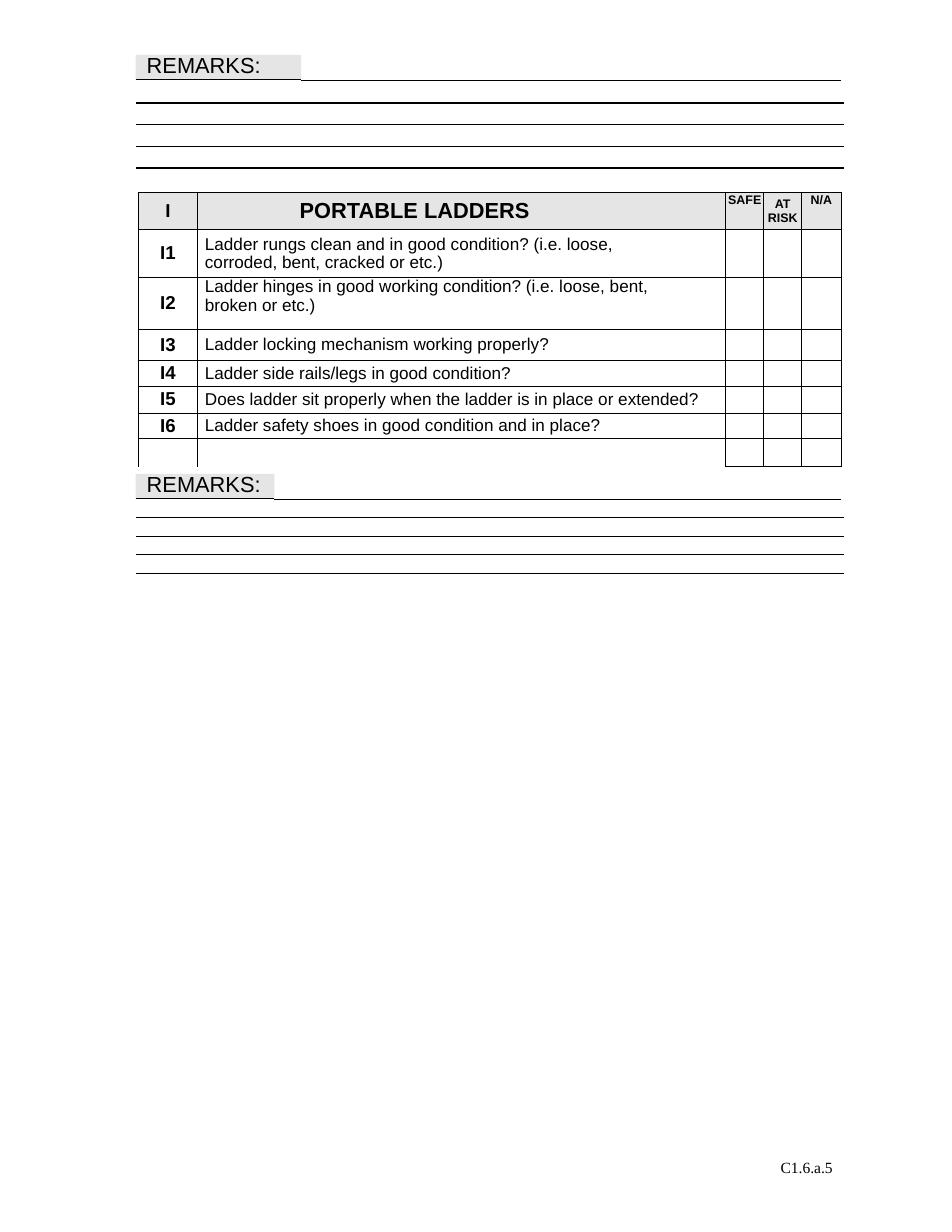
from lxml.etree import SubElement
from pptx import Presentation
from pptx.dml.color import RGBColor
from pptx.enum.shapes import MSO_CONNECTOR
from pptx.enum.text import MSO_ANCHOR, MSO_AUTO_SIZE, PP_ALIGN
from pptx.oxml.ns import qn
from pptx.util import Inches, Pt

BLACK = RGBColor(0, 0, 0)
GREY = RGBColor(0xE5, 0xE5, 0xE5)
RULE_WIDTH = Pt(0.7)
SANS, SERIF = "Arial", "Times New Roman"

COLUMN_WIDTHS = [0.52, 4.72, 0.34, 0.34, 0.35]
ROW_HEIGHTS = [0.33, 0.43, 0.46, 0.28, 0.23, 0.24, 0.23, 0.25]
HEADINGS = ["I", "PORTABLE LADDERS", "SAFE", "AT\vRISK", "N/A"]
QUESTIONS = [
    "Ladder rungs clean and in good condition? (i.e. loose, corroded, bent, cracked or etc.)",
    "Ladder hinges in good working condition? (i.e. loose, bent, broken or etc.)",
    "Ladder locking mechanism working properly?",
    "Ladder side rails/legs in good condition?",
    "Does ladder sit properly when the ladder is in place or extended?",
    "Ladder safety shoes in good condition and in place?",
]


def style_paragraph(para, size, line, name=SANS, bold=False, align=PP_ALIGN.LEFT):
    """Give a paragraph its font, exact line height and alignment."""
    para.alignment = align
    para.line_spacing = Pt(line)
    para.space_before = para.space_after = Pt(0)
    font = para.font
    font.name, font.size, font.bold = name, Pt(size), bold
    font.color.rgb = BLACK


def fill_placeholder(shape, box, text, size, line, name=SANS, indent=0):
    """Move a body placeholder to a box and write one unbulleted line in it."""
    shape.left, shape.top, shape.width, shape.height = map(Inches, box)
    frame = shape.text_frame
    frame.margin_left = frame.margin_right = frame.margin_bottom = 0
    frame.margin_top = Inches(0.01)
    frame.vertical_anchor = MSO_ANCHOR.TOP
    frame.auto_size = MSO_AUTO_SIZE.NONE
    frame.text = text
    para = frame.paragraphs[0]
    properties = para._p.get_or_add_pPr()
    properties.set("marL", str(Inches(indent)))
    properties.set("indent", "0")
    SubElement(properties, qn("a:buNone"))
    style_paragraph(para, size, line, name)


def add_rule(page, left, right, top):
    """Draw a thin horizontal rule."""
    rule = page.shapes.add_connector(
        MSO_CONNECTOR.STRAIGHT, Inches(left), Inches(top), Inches(right), Inches(top))
    rule.line.color.rgb = BLACK
    rule.line.width = RULE_WIDTH
    SubElement(rule._element.spPr, qn("a:effectLst"))


def add_remarks(page, label, box, label_width, first_rule):
    """Place a shaded label and its writing rules, the last on the box's bottom."""
    left, top, width, height = box
    label_height, rule_count = 0.22, 4
    fill_placeholder(label, (left, top, label_width, label_height), "REMARKS:", 14, 14, indent=0.1)
    label.fill.solid()
    label.fill.fore_color.rgb = GREY
    split, right = left + label_width, left + width
    add_rule(page, left, split, top + label_height)
    add_rule(page, split, right - 0.03, top + label_height + 0.01)
    step = (height - first_rule) / (rule_count - 1)
    for index in range(rule_count):
        add_rule(page, left, right, top + first_rule + index * step)


def set_borders(cell, open_bottom):
    """Outline a cell, leaving its bottom edge open if asked."""
    properties = cell._tc.get_or_add_tcPr()
    for side in "LRTB":
        edge = SubElement(properties, qn(f"a:ln{side}"), w=str(RULE_WIDTH))
        if side == "B" and open_bottom:
            SubElement(edge, qn("a:noFill"))
        else:
            fill = SubElement(edge, qn("a:solidFill"))
            SubElement(fill, qn("a:srgbClr"), val=str(BLACK))


def format_cell(cell, row, column):
    """Format a checklist cell according to its row and column."""
    header, question = row == 0, column == 1
    set_borders(cell, row == len(ROW_HEIGHTS) - 1 and column < 2)
    cell.margin_left = cell.margin_right = cell.margin_top = cell.margin_bottom = 0
    cell.vertical_anchor = MSO_ANCHOR.MIDDLE
    if header:
        cell.fill.solid()
        cell.fill.fore_color.rgb = GREY
    else:
        cell.fill.background()
    if header and column in (2, 4) or question and row == 2:
        cell.vertical_anchor = MSO_ANCHOR.TOP

    para = cell.text_frame.paragraphs[0]
    if header and question:
        cell.margin_right = Inches(1.75)
        style_paragraph(para, 14, 15, bold=True, align=PP_ALIGN.RIGHT)
    elif question:
        cell.margin_left = Inches(0.07)
        cell.margin_right = Inches(0.6 if row in (1, 2) else 0)
        style_paragraph(para, 11, 12)
    elif column == 0:
        style_paragraph(para, 12, 13, bold=True, align=PP_ALIGN.CENTER)
    else:
        style_paragraph(para, 8, 9, bold=True, align=PP_ALIGN.CENTER)


def add_checklist(page, left, top):
    """Build the ladder checklist table from its column and row grid."""
    table = page.shapes.add_table(
        len(ROW_HEIGHTS), len(COLUMN_WIDTHS), Inches(left), Inches(top),
        Inches(sum(COLUMN_WIDTHS)), Inches(sum(ROW_HEIGHTS))).table
    table.first_row = table.horz_banding = False
    for column, width in zip(table.columns, COLUMN_WIDTHS):
        column.width = Inches(width)
    for row, height in zip(table.rows, ROW_HEIGHTS):
        row.height = Inches(height)
    entries = [HEADINGS] + [[f"I{number}", text] for number, text in enumerate(QUESTIONS, 1)]
    for row, texts in enumerate(entries):
        for column, text in enumerate(texts):
            table.cell(row, column).text = text
    for row in range(len(ROW_HEIGHTS)):
        for column in range(len(COLUMN_WIDTHS)):
            format_cell(table.cell(row, column), row, column)


def main():
    """Build the inspection page and save it."""
    deck = Presentation()
    deck.slide_width, deck.slide_height = Inches(8.5), Inches(11)
    page = deck.slides.add_slide(deck.slide_layouts.get_by_name("Comparison"))
    title, upper_label, page_code, lower_label, spare = page.placeholders
    for unused in (title, spare):
        unused._element.getparent().remove(unused._element)

    add_remarks(page, upper_label, (1.21, 0.49, 6.33, 1.01), 1.48, 0.43)
    add_checklist(page, 1.24, 1.72)
    add_remarks(page, lower_label, (1.21, 4.23, 6.33, 0.89), 1.24, 0.39)
    fill_placeholder(page_code, (6.97, 10.34, 0.59, 0.17), "C1.6.a.5", 10, 11, SERIF)
    deck.save("out.pptx")


if __name__ == "__main__":
    main()
